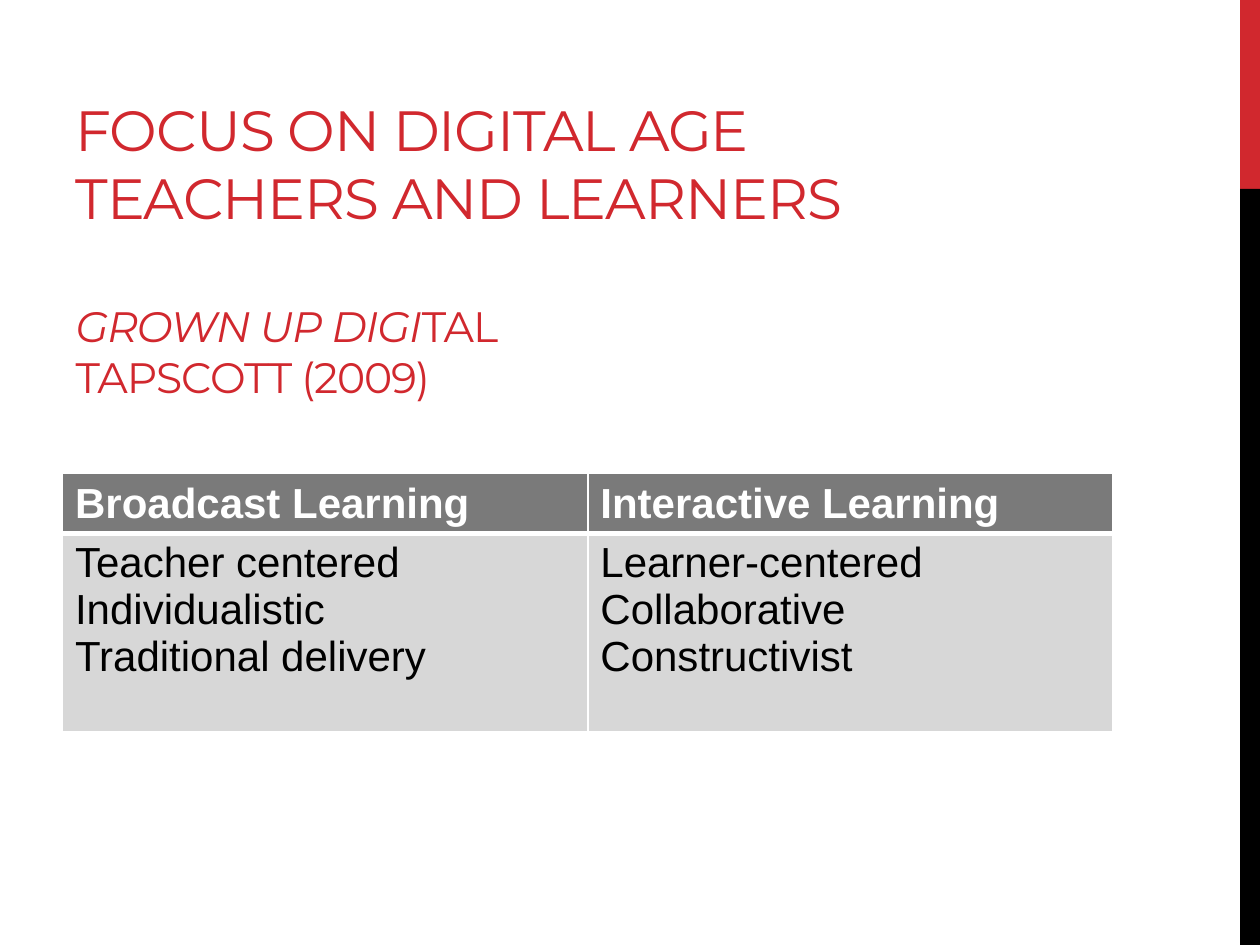
from lxml.etree import SubElement
from pptx import Presentation
from pptx.dml.color import RGBColor
from pptx.enum.shapes import MSO_SHAPE
from pptx.enum.text import MSO_ANCHOR, MSO_AUTO_SIZE, PP_ALIGN
from pptx.oxml.ns import qn
from pptx.util import Cm, Pt

COLORS = {
    "red": "D1282E",
    "black": "000000",
    "white": "FFFFFF",
    "header": "7A7A7A",
    "body": "D7D7D7",
}


def rgb(name):
    return RGBColor.from_string(COLORS[name])


def add_text(paragraph, text, *, font, size, color, bold=False, italic=False, spacing=0):
    """Add a formatted run; spacing is the letter spacing in points."""
    run = paragraph.add_run()
    run.text = text
    run.font.name = font
    run.font.size = Pt(size)
    run.font.bold = bold
    run.font.italic = italic
    run.font.color.rgb = rgb(color)
    if spacing:
        run.font._element.set("spc", str(round(spacing * 100)))


class SlideBuilder:
    title_style = dict(font="Montserrat", color="red", spacing=-0.6)
    table_style = dict(font="Arial", size=24)

    def __init__(self, slide):
        self.slide = slide

    def bar(self, left, top, width, height, color):
        bar = self.slide.shapes.add_shape(
            MSO_SHAPE.RECTANGLE, Cm(left), Cm(top), Cm(width), Cm(height))
        bar.shadow.inherit = False
        bar.fill.solid()
        bar.fill.fore_color.rgb = rgb(color)
        bar.line.fill.background()

    def title(self, left, top, width, height, lines):
        """Each line is (space before in points, size, [(text, italic), ...])."""
        title = self.slide.shapes.title
        title.left, title.top = Cm(left), Cm(top)
        title.width, title.height = Cm(width), Cm(height)
        frame = title.text_frame
        frame.word_wrap = True
        frame.auto_size = MSO_AUTO_SIZE.NONE
        frame.vertical_anchor = MSO_ANCHOR.BOTTOM
        for index, (gap, size, parts) in enumerate(lines):
            paragraph = frame.add_paragraph() if index else frame.paragraphs[0]
            paragraph.alignment = PP_ALIGN.LEFT
            paragraph.space_before = Pt(gap)
            for text, italic in parts:
                add_text(paragraph, text, size=size, italic=italic, **self.title_style)

    def table(self, left, top, column_width, row_heights, columns):
        """Each column is (heading, list of entries)."""
        table = self.slide.shapes.add_table(
            len(row_heights), len(columns), Cm(left), Cm(top),
            Cm(column_width * len(columns)), Cm(sum(row_heights))).table
        for row, height in zip(table.rows, row_heights):
            row.height = Cm(height)
        for index, (heading, entries) in enumerate(columns):
            table.columns[index].width = Cm(column_width)
            self.cell(table.cell(0, index), [heading], "header", "white",
                      bold=True, bottom=3)
            self.cell(table.cell(1, index), entries, "body", "black", top=3)

    def cell(self, cell, entries, fill, color, bold=False, top=1, bottom=1):
        # Borders come before the fill in the cell properties
        properties = cell._tc.get_or_add_tcPr()
        for side, width in (("L", 1), ("R", 1), ("T", top), ("B", bottom)):
            border = SubElement(properties, qn(f"a:ln{side}"), w=str(Pt(width)))
            solid = SubElement(border, qn("a:solidFill"))
            SubElement(solid, qn("a:srgbClr"), val=COLORS["white"])
        cell.fill.solid()
        cell.fill.fore_color.rgb = rgb(fill)
        frame = cell.text_frame
        for index, entry in enumerate(entries):
            paragraph = frame.add_paragraph() if index else frame.paragraphs[0]
            add_text(paragraph, entry, color=color, bold=bold, **self.table_style)


def main():
    presentation = Presentation()
    presentation.slide_width, presentation.slide_height = Cm(25.4), Cm(19.05)
    title_only = presentation.slide_layouts[5]
    builder = SlideBuilder(presentation.slides.add_slide(title_only))

    # Side stripe
    builder.bar(25, 0, 0.4, 3.81, "red")
    builder.bar(25, 3.81, 0.4, 15.24, "black")

    # Heading and the book it draws on
    builder.title(1.27, 0.43, 16.08, 7.8, [
        (0, 32.4, [("FOCUS ON DIGITAL AGE TEACHERS AND LEARNERS", False)]),
        (39.5, 24.3, [("GROWN UP DIGI", True), ("TAL", False)]),
        (0, 24.3, [("TAPSCOTT (2009)", False)]),
    ])

    # Comparison of the two ways of learning
    builder.table(1.26, 9.55, 10.59, [1.2, 4], [
        ("Broadcast Learning",
         ["Teacher centered", "Individualistic", "Traditional delivery"]),
        ("Interactive Learning",
         ["Learner-centered", "Collaborative", "Constructivist"]),
    ])

    presentation.save("out.pptx")


if __name__ == "__main__":
    main()
